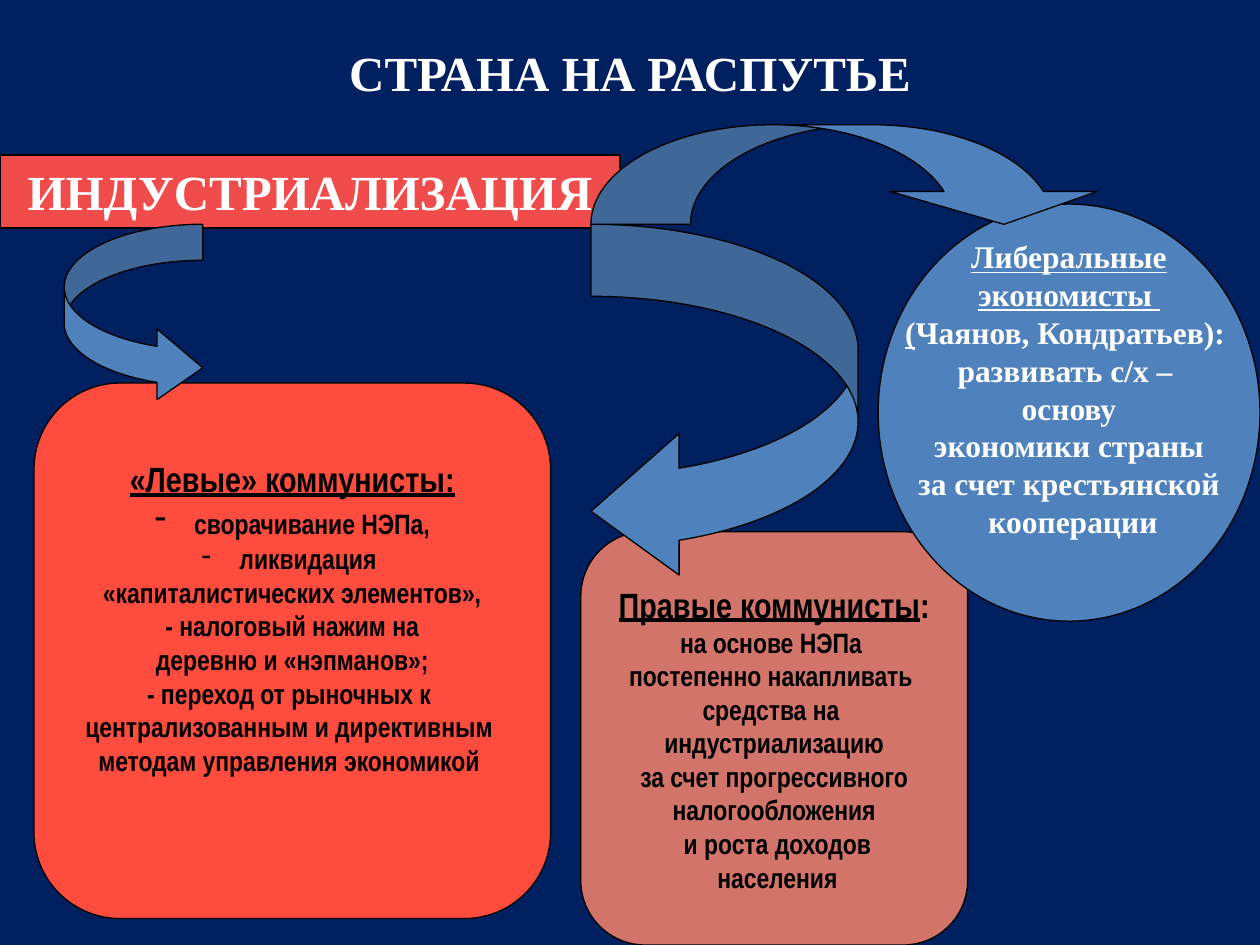
"""Build the slide on the three positions in the industrialization debate."""
from dataclasses import dataclass

from lxml import etree
from pptx import Presentation
from pptx.dml.color import RGBColor
from pptx.enum.shapes import MSO_SHAPE
from pptx.enum.text import MSO_ANCHOR, MSO_AUTO_SIZE, PP_ALIGN
from pptx.oxml.ns import qn
from pptx.util import Inches, Pt

ROUNDED = MSO_SHAPE.ROUNDED_RECTANGLE
OVAL = MSO_SHAPE.OVAL
RIGHT_ARROW = MSO_SHAPE.CURVED_RIGHT_ARROW
LEFT_ARROW = MSO_SHAPE.CURVED_LEFT_ARROW
DOWN_ARROW = MSO_SHAPE.CURVED_DOWN_ARROW
CENTER = PP_ALIGN.CENTER
MIDDLE = MSO_ANCHOR.MIDDLE
TOP = MSO_ANCHOR.TOP
NO_AUTOFIT = MSO_AUTO_SIZE.NONE

COLORS = {
    "background": "002060",
    "banner": "F04C4C",
    "left": "FE4C3E",
    "right": "D2746A",
    "blue": "4F81BD",
    "black": "000000",
    "white": "FFFFFF",
}
SERIF = "Times New Roman"
NARROW = "Arial Narrow"
BULLET_INDENT = Inches(0.25)


@dataclass
class Span:
    text: str
    size: int = 16
    bold: bool = True
    underline: bool = False


@dataclass
class Line:
    spans: list[Span]
    bulleted: bool = False


@dataclass
class Camp:
    kind: MSO_SHAPE
    box: tuple[float, float, float, float]
    fill: str
    font: str
    color: str
    bottom_inset: float
    lines: list[Line]


@dataclass
class Arrow:
    kind: MSO_SHAPE
    box: tuple[float, float, float, float]
    adjustments: tuple[float, float, float]


def plain(size: int, *texts: str) -> list[Line]:
    return [Line([Span(text, size)]) for text in texts]


CAMPS = [
    Camp(ROUNDED, (0.27, 3.04, 4.1, 4.25), "left", NARROW, "black", 0.58, [
        Line([Span("«Левые» коммунисты:", 20, underline=True)]),
        Line([Span(" ", 20, bold=False), Span("сворачивание НЭПа,")], bulleted=True),
        Line([Span(" ликвидация ")], bulleted=True),
        *plain(16, "«капиталистических элементов»,", "- налоговый нажим на",
               "деревню и «нэпманов»;", "- переход от рыночных к ",
               "централизованным и директивным ", "методам управления экономикой "),
    ]),
    Camp(ROUNDED, (4.61, 4.22, 3.07, 3.28), "right", NARROW, "black", 0.05, [
        Line([Span("Правые коммунисты", 20, underline=True), Span(":", 20)]),
        *plain(16, "на основе НЭПа ", "постепенно накапливать ", "средства на ",
               "индустриализацию", " за счет прогрессивного ", "налогообложения",
               " и роста доходов", " населения"),
    ]),
    Camp(OVAL, (6.97, 1.62, 3.03, 3.31), "blue", SERIF, "white", 0.43, [
        Line([Span("Либеральные", 18, underline=True)]),
        Line([Span("экономисты ", 18, underline=True)]),
        Line([Span("(", 18, underline=True), Span("Чаянов, Кондратьев): ", 18)]),
        *plain(18, "развивать с/х – ", "основу", " экономики страны ",
               "за счет крестьянской", " кооперации"),
    ]),
]
ARROWS = [
    Arrow(RIGHT_ARROW, (0.51, 1.78, 1.1, 1.42), (0.26, 0.51, 0.33)),
    Arrow(LEFT_ARROW, (4.69, 1.78, 2.12, 2.84), (0.27, 0.53, 0.33)),
    Arrow(DOWN_ARROW, (4.69, 0.99, 4.1, 0.79), (1.04, 2.08, 0.33)),
]


def rgb(name: str) -> RGBColor:
    return RGBColor.from_string(COLORS[name])


def paint(shape, fill: str) -> None:
    shape.fill.solid()
    shape.fill.fore_color.rgb = rgb(fill)
    shape.line.color.rgb = rgb("black")
    shape.line.width = Pt(0.75)


def add_outlined(slide, kind: MSO_SHAPE, box: tuple, fill: str):
    shape = slide.shapes.add_shape(kind, *map(Inches, box))
    shape.shadow.inherit = False
    paint(shape, fill)
    return shape


def style_font(font, face: str, size: int, color: str, bold: bool = True) -> None:
    font.name = face
    font.size = Pt(size)
    font.bold = bold
    font.color.rgb = rgb(color)


def fill_placeholder(placeholder, box: tuple, text: str, anchor: MSO_ANCHOR) -> None:
    placeholder.left, placeholder.top, placeholder.width, placeholder.height = map(Inches, box)
    frame = placeholder.text_frame
    frame.text = text
    frame.auto_size = NO_AUTOFIT
    frame.vertical_anchor = anchor
    heading = frame.paragraphs[0]
    heading.alignment = CENTER
    heading.space_before = Pt(0)
    etree.SubElement(heading._p.get_or_add_pPr(), qn("a:buNone"))
    style_font(heading.runs[0].font, SERIF, 28, "white")


def add_dash(paragraph) -> None:
    properties = paragraph._p.get_or_add_pPr()
    properties.set("marL", str(BULLET_INDENT))
    properties.set("indent", str(-BULLET_INDENT))
    etree.SubElement(properties, qn("a:buChar"), char="-")


def add_camp(slide, camp: Camp) -> None:
    frame = add_outlined(slide, camp.kind, camp.box, camp.fill).text_frame
    frame.word_wrap = False
    frame.vertical_anchor = MIDDLE
    frame.margin_bottom = Inches(camp.bottom_inset)
    for index, line in enumerate(camp.lines):
        paragraph = frame.add_paragraph() if index else frame.paragraphs[0]
        paragraph.alignment = CENTER
        if line.bulleted:
            add_dash(paragraph)
        for span in line.spans:
            run = paragraph.add_run()
            run.text = span.text
            style_font(run.font, camp.font, span.size, camp.color, span.bold)
            run.font.underline = span.underline


def add_arrow(slide, arrow: Arrow) -> None:
    shape = add_outlined(slide, arrow.kind, arrow.box, "blue")
    for index, value in enumerate(arrow.adjustments):
        shape.adjustments[index] = value


def main() -> None:
    presentation = Presentation()
    presentation.slide_width = Inches(10)
    presentation.slide_height = Inches(7.5)
    slide = presentation.slides.add_slide(presentation.slide_layouts[1])
    slide.background.fill.solid()
    slide.background.fill.fore_color.rgb = rgb("background")

    fill_placeholder(slide.shapes.title, (0.5, 0.3, 9, 0.54), "СТРАНА НА РАСПУТЬЕ", MIDDLE)
    banner = slide.placeholders[1]
    fill_placeholder(banner, (0, 1.23, 4.92, 0.58), "ИНДУСТРИАЛИЗАЦИЯ", TOP)
    paint(banner, "banner")

    for camp in CAMPS:
        add_camp(slide, camp)
    for arrow in ARROWS:
        add_arrow(slide, arrow)
    presentation.save("out.pptx")


if __name__ == "__main__":
    main()
